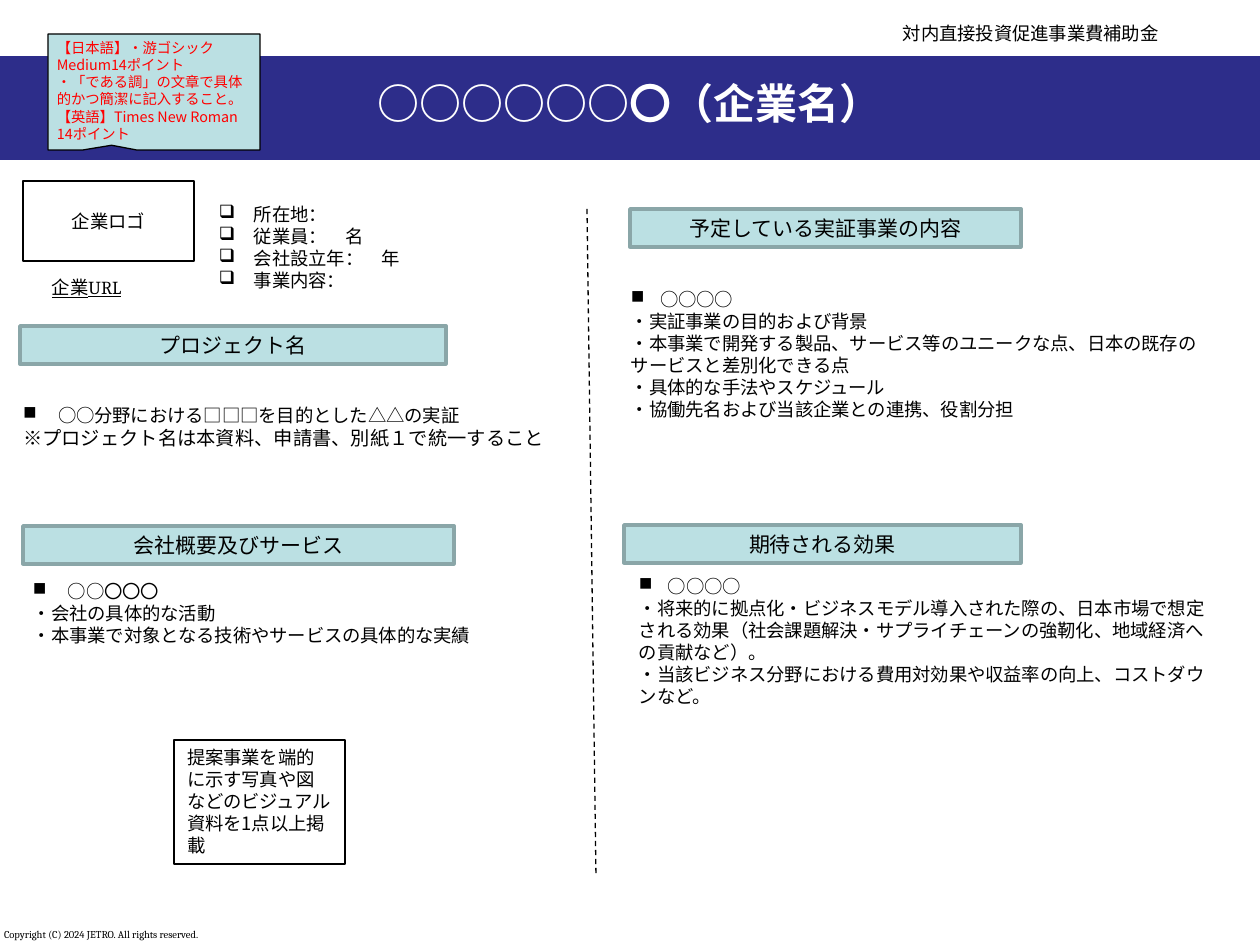
from lxml import etree
from pptx import Presentation, util as u
from pptx.dml.color import RGBColor
from pptx.enum import dml, shapes, text
from pptx.oxml import ns

PX = 914400 / 126
GOTHIC = "Noto Sans CJK JP"
SERIF = "Cambria"
NAVY, PALE, GREY, BLACK = "2D2D8A", "BBE0E3", "8AA6A8", "000000"
LEFT, CENTER = text.PP_ALIGN.LEFT, text.PP_ALIGN.CENTER
TOP, MIDDLE = text.MSO_ANCHOR.TOP, text.MSO_ANCHOR.MIDDLE


def write(sp, content, size=10.5, font=GOTHIC, color=BLACK, bold=False, underline=False,
          align=LEFT, anchor=TOP, inset=(13, 6), wrap=True, bullet=None, bullets=1, indent=35):
    """Fill a shape with one paragraph per line; the first `bullets` lines get the bullet."""
    tf = sp.text_frame
    tf.word_wrap = wrap
    tf.vertical_anchor = anchor
    tf.margin_left = tf.margin_right = round(inset[0] * PX)
    tf.margin_top = tf.margin_bottom = round(inset[1] * PX)
    for i, line in enumerate(content.split("\n")):
        p = tf.add_paragraph() if i else tf.paragraphs[0]
        p.alignment = align
        p.line_spacing = u.Pt(size * 1.2)
        if bullet and i < bullets:
            pPr = p._p.get_or_add_pPr()
            pPr.set("marL", str(round(indent * PX)))
            pPr.set("indent", str(-round(indent * PX)))
            etree.SubElement(pPr, ns.qn("a:buChar")).set("char", bullet)
        r = p.add_run()
        r.text = line
        r.font.size, r.font.name = u.Pt(size), font
        r.font.bold, r.font.underline = bold, underline
        r.font.color.rgb = RGBColor.from_string(color)
        etree.SubElement(r._r.get_or_add_rPr(), ns.qn("a:ea")).set("typeface", GOTHIC)
    return tf


def box(x, y, w, h, fill=None, line=None, width=0.75, kind=shapes.MSO_SHAPE.RECTANGLE):
    sp = s.shapes.add_shape(kind, *(round(v * PX) for v in (x, y, w, h)))
    sp.shadow.inherit = False
    for target, color in ((sp.fill, fill), (sp.line.fill, line)):
        if color:
            target.solid()
            target.fore_color.rgb = RGBColor.from_string(color)
        else:
            target.background()
    if line:
        sp.line.width = u.Pt(width)
    return sp


prs = Presentation()
prs.slide_width, prs.slide_height = u.Inches(10), u.Inches(7.5)
s = prs.slides.add_slide(prs.slide_layouts[6])

# Header band
box(0, 56, 1260, 104, fill=NAVY)

# Plain text blocks
blocks = [
    (0, 914, 399, 31, "Copyright (C) 2024 JETRO. All rights reserved.",
     dict(size=6, font=SERIF, anchor=text.MSO_ANCHOR.BOTTOM, inset=(4, 4))),
    (219, 69, 822, 67, "○○○○○○〇（企業名）",
     dict(size=24, color="FFFFFF", bold=True, align=CENTER, anchor=MIDDLE)),
    (890, 16, 285, 35, "対内直接投資促進事業費補助金", dict(wrap=False)),
    (39, 270, 165, 35, "企業URL", dict(font=SERIF, underline=True)),
    (210, 198, 348, 98, "所在地：\n従業員：　名\n会社設立年：　年\n事業内容：",
     dict(bullet="❑", bullets=4, inset=(9, 5))),
    (20, 574, 481, 79, "○○〇〇〇\n・会社の具体的な活動\n"
     "・本事業で対象となる技術やサービスの具体的な実績", dict(bullet="■")),
    (622, 283, 596, 144, "○○○○\n・実証事業の目的および背景\n"
     "・本事業で開発する製品、サービス等のユニークな点、日本の既存のサービスと差別化できる点\n"
     "・具体的な手法やスケジュール\n・協働先名および当該企業との連携、役割分担",
     dict(bullet="■", indent=29, inset=(9, 5))),
    (630, 570, 595, 144, "○○○○\n"
     "・将来的に拠点化・ビジネスモデル導入された際の、日本市場で想定される効果"
     "（社会課題解決・サプライチェーンの強靭化、地域経済への貢献など）。\n"
     "・当該ビジネス分野における費用対効果や収益率の向上、コストダウンなど。",
     dict(bullet="■", indent=29, inset=(9, 5))),
]
for x, y, w, h, content, style in blocks:
    tb = s.shapes.add_textbox(*(round(v * PX) for v in (x, y, w, h)))
    write(tb, content, **style)

# Project name, with a slightly larger note below it
tb = s.shapes.add_textbox(*(round(v * PX) for v in (10, 398, 558, 58)))
tf = write(tb, "○○分野における□□□を目的とした△△の実証\n"
           "※プロジェクト名は本資料、申請書、別紙１で統一すること", bullet="■")
note = tf.paragraphs[1]
note.line_spacing = u.Pt(13.2)
note.runs[0].font.size = u.Pt(11)

# Section headings
for x, y, w, heading in [
    (20, 326, 426, "プロジェクト名"),
    (23, 526, 431, "会社概要及びサービス"),
    (624, 525, 397, "期待される効果"),
    (630, 209, 391, "予定している実証事業の内容"),
]:
    write(box(x, y, w, 38, fill=PALE, line=GREY, width=2), heading,
          size=12, align=CENTER, anchor=MIDDLE)

# Frames for the company logo and the visual material
write(box(23, 181, 171, 80, line=BLACK), "企業ロゴ", align=CENTER, anchor=MIDDLE)
write(box(174, 740, 171, 124, line=BLACK),
      "提案事業を端的に示す写真や図などのビジュアル資料を1点以上掲載")

# Column divider
divider = s.shapes.add_connector(shapes.MSO_CONNECTOR.STRAIGHT,
                                 *(round(v * PX) for v in (587, 209, 596, 876)))
divider.line.color.rgb = RGBColor.from_string(BLACK)
divider.line.width = u.Pt(0.75)
divider.line.dash_style = dml.MSO_LINE.DASH
etree.SubElement(divider._element.spPr, ns.qn("a:effectLst"))

# Formatting instructions
callout = box(48, 34, 212, 116, fill=PALE, line=BLACK,
              kind=shapes.MSO_SHAPE.RECTANGULAR_CALLOUT)
callout.adjustments[0], callout.adjustments[1] = -0.2, 0.46
write(callout, "【日本語】・游ゴシックMedium14ポイント\n"
      "・「である調」の文章で具体的かつ簡潔に記入すること。\n"
      "【英語】Times New Roman 14ポイント", size=8.2, color="FF0000", inset=(9, 5))

prs.save("out.pptx")
